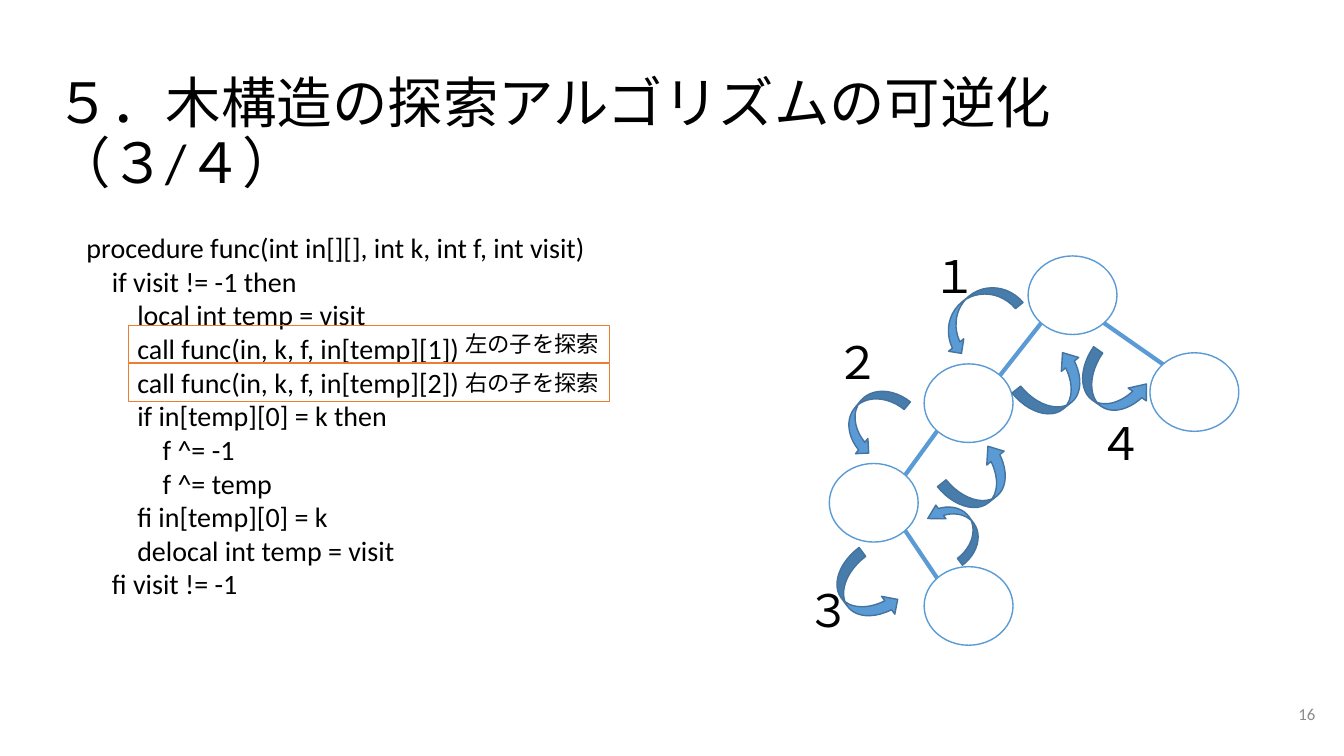
from pptx import Presentation
from pptx import util as u
from pptx.dml.color import RGBColor
from pptx.enum import shapes, text
from pptx.oxml.ns import qn
from lxml import etree

BLUE = RGBColor(0x5B, 0x9B, 0xD5)
DARK_BLUE = RGBColor(0x43, 0x73, 0x9E)
ORANGE = RGBColor(0xED, 0x7D, 0x31)
WHITE = RGBColor(0xFF, 0xFF, 0xFF)
BLACK = RGBColor(0, 0, 0)
GREY = RGBColor(0x8C, 0x8C, 0x8C)

deck = Presentation()
deck.slide_width = u.Cm(33.87)
deck.slide_height = u.Cm(19.05)
page = deck.slides.add_slide(deck.slide_layouts[6])


def add_span(para, words, size, color=BLACK):
    span = para.add_run()
    span.text = words
    span.font.name = "Calibri"
    span.font.size = u.Pt(size)
    span.font.color.rgb = color


def add_box(left, top, width, height, grow=True):
    box = page.shapes.add_textbox(u.Cm(left), u.Cm(top), u.Cm(width), u.Cm(height))
    frame = box.text_frame
    frame.word_wrap = True
    if grow:
        frame.auto_size = text.MSO_AUTO_SIZE.SHAPE_TO_FIT_TEXT
    else:
        frame.margin_left = frame.margin_right = u.Cm(0.25)
        frame.margin_top = frame.margin_bottom = u.Cm(0.25)
    return frame


# Tree nodes, by centre
NODE_WIDTH, NODE_HEIGHT = 2.24, 1.98
nodes = {
    "root": (27.03, 7.44),
    "right": (30.1, 9.88),
    "left": (24.41, 10.16),
    "left-left": (22.02, 12.67),
    "leaf": (24.41, 15.27),
}
for x, y in nodes.values():
    node = page.shapes.add_shape(
        shapes.MSO_SHAPE.OVAL, u.Cm(x - NODE_WIDTH / 2), u.Cm(y - NODE_HEIGHT / 2),
        u.Cm(NODE_WIDTH), u.Cm(NODE_HEIGHT))
    node.shadow.inherit = False
    node.fill.solid()
    node.fill.fore_color.rgb = WHITE
    node.line.color.rgb = BLUE
    node.line.width = u.Pt(1)

# Edges meet each ellipse on its diagonal
DIAGONAL = 0.5 ** 0.5
dx, dy = NODE_WIDTH / 2 * DIAGONAL, NODE_HEIGHT / 2 * DIAGONAL
for parent, child in [("root", "left"), ("root", "right"),
                      ("left", "left-left"), ("left-left", "leaf")]:
    (x1, y1), (x2, y2) = nodes[parent], nodes[child]
    side = 1 if x2 > x1 else -1
    edge = page.shapes.add_connector(
        shapes.MSO_CONNECTOR.STRAIGHT, u.Cm(x1 + side * dx), u.Cm(y1 + dy),
        u.Cm(x2 - side * dx), u.Cm(y2 - dy))
    edge.line.color.rgb = BLUE
    edge.line.width = u.Pt(3)
    etree.SubElement(edge._element.spPr, qn("a:effectLst"))

# Curved arrows: left, top, width, height, rotation, flip, head length
walk_arrows = [
    (24.1, 6.83, 0.99, 2.26, 230.4, "flipV", 0.25),
    (21.46, 9.6, 0.99, 1.91, 219.2, "flipV", 0.25),
    (21.21, 13.94, 1.12, 1.91, 143.4, "flipV", 0.25),
    (23.67, 12.47, 0.86, 1.68, 143.4, "flipH", 0.424),
    (24.16, 11.15, 1.12, 1.91, 51.3, "flipV", 0.314),
    (26.04, 8.79, 1.12, 1.91, 51.3, "flipV", 0.314),
    (27.46, 8.79, 1.12, 1.91, 125.2, "flipV", 0.314),
]
for left, top, width, height, turn, flip, head in walk_arrows:
    arrow = page.shapes.add_shape(
        shapes.MSO_SHAPE.CURVED_LEFT_ARROW, u.Cm(left), u.Cm(top), u.Cm(width), u.Cm(height))
    arrow.shadow.inherit = False
    arrow.rotation = turn
    arrow._element.spPr.find(qn("a:xfrm")).set(flip, "1")
    arrow.adjustments[2] = head
    arrow.fill.solid()
    arrow.fill.fore_color.rgb = BLUE
    arrow.line.color.rgb = DARK_BLUE
    arrow.line.width = u.Pt(1)

# Step numbers
for number, left, top in [("１", 23.24, 6.15), ("２", 20.8, 8.31),
                          ("３", 20.07, 14.55), ("４", 27.43, 10.36)]:
    add_span(add_box(left, top, 1.68, 1.63).paragraphs[0], number, 32)

# Title
title = add_box(1.14, 1.65, 31.55, 2.13, grow=False).paragraphs[0]
title.line_spacing = 0.9
add_span(title, "５．木構造の探索アルゴリズムの可逆化（３/４）", 39.6)

# Procedure, with indent depth per line
INDENT = u.Cm(0.64)
code_lines = [
    (0, "procedure func(int in[][], int k, int f, int visit)"),
    (1, "if visit != -1 then"),
    (2, "local int temp = visit"),
    (2, "call func(in, k, f, in[temp][1])"),
    (2, "call func(in, k, f, in[temp][2])"),
    (2, "if in[temp][0] = k then"),
    (3, "f ^= -1"),
    (3, "f ^= temp"),
    (2, "fi in[temp][0] = k"),
    (2, "delocal int temp = visit"),
    (1, "fi visit != -1"),
]
code = add_box(1.93, 5.69, 15.98, 9.65)
for index, (depth, words) in enumerate(code_lines):
    para = code.add_paragraph() if index else code.paragraphs[0]
    properties = para._p.get_or_add_pPr()
    properties.set("marL", str(depth * INDENT))
    properties.set("indent", "0")
    add_span(para, words, 20)

# Frames around the two recursive calls
FRAME_HEIGHT = 0.94
for row, words in enumerate(["左の子を探索", "右の子を探索"]):
    call = page.shapes.add_shape(
        shapes.MSO_SHAPE.RECTANGLE, u.Cm(3.23), u.Cm(8.2 + row * 0.97),
        u.Cm(12.12), u.Cm(FRAME_HEIGHT))
    call.shadow.inherit = False
    call.fill.background()
    call.line.color.rgb = ORANGE
    call.line.width = u.Pt(0.75)
    frame = call.text_frame
    frame.word_wrap = True
    frame.auto_size = text.MSO_AUTO_SIZE.SHAPE_TO_FIT_TEXT
    frame.vertical_anchor = text.MSO_ANCHOR.TOP
    frame.paragraphs[0].alignment = text.PP_ALIGN.RIGHT
    add_span(frame.paragraphs[0], words, 16)

# Page number
footer = add_box(31.37, 17.27, 2.03, 1.45, grow=False)
footer.vertical_anchor = text.MSO_ANCHOR.MIDDLE
footer.paragraphs[0].alignment = text.PP_ALIGN.RIGHT
add_span(footer.paragraphs[0], "16", 12, GREY)

deck.save("out.pptx")
